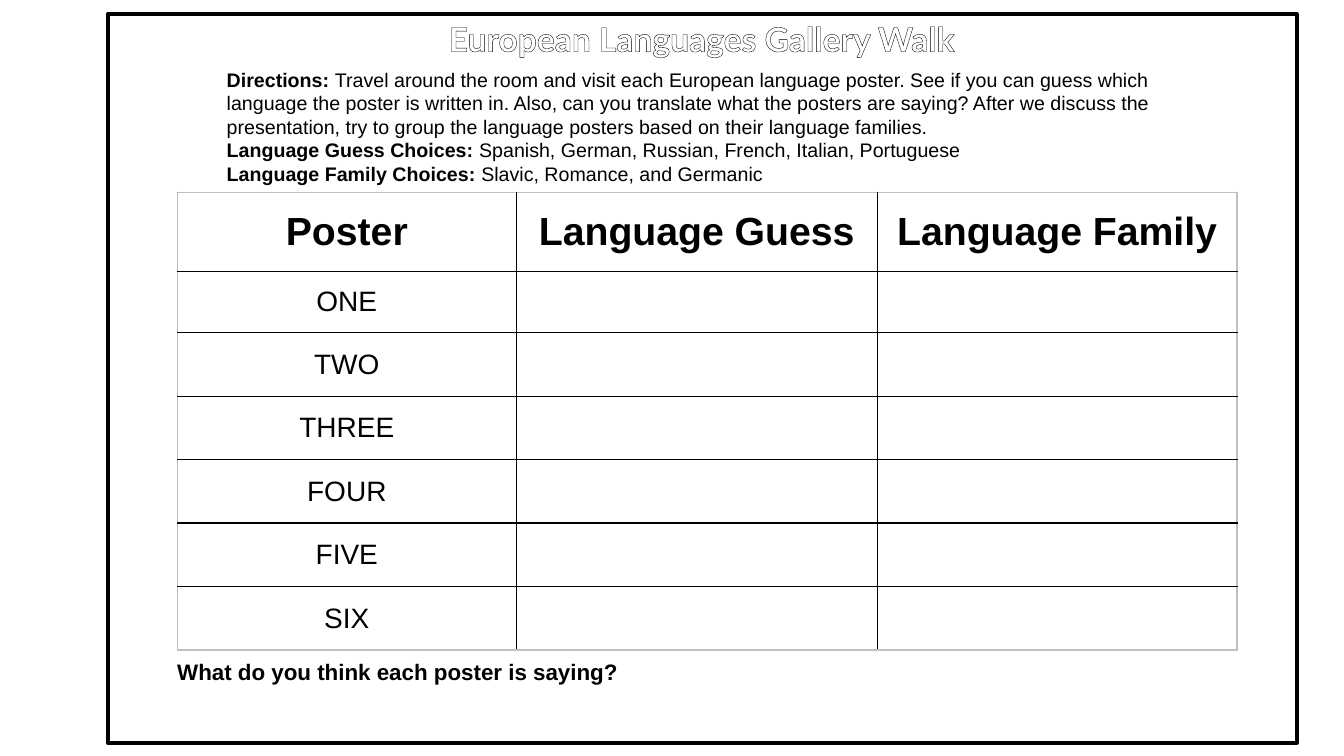
from lxml import etree
from pptx import Presentation, util as u
from pptx.dml.color import RGBColor
from pptx.enum import shapes, text
from pptx.oxml import parse_xml
from pptx.oxml.ns import nsdecls

COLORS = {"ink": "000000", "paper": "FFFFFF", "table edge": "BFBFBF"}
DIRECTIONS = [
    ("Directions: ", "Travel around the room and visit each European language poster. "
     "See if you can guess which language the poster is written in. Also, can you "
     "translate what the posters are saying? After we discuss the presentation, try to "
     "group the language posters based on their language families."),
    ("Language Guess Choices: ", "Spanish, German, Russian, French, Italian, Portuguese"),
    ("Language Family Choices: ", "Slavic, Romance, and Germanic"),
]
HEADINGS = ["Poster", "Language Guess", "Language Family"]
POSTERS = ["ONE", "TWO", "THREE", "FOUR", "FIVE", "SIX"]


def inches(box):
    return [u.Inches(length) for length in box]


def add_span(para, words, size, bold=False, font="Arial", color="ink"):
    span = para.add_run()
    span.text = words
    span.font.size = u.Pt(size)
    span.font.bold = bold
    span.font.name = font
    span.font.color.rgb = RGBColor.from_string(COLORS[color])
    return span


def line_xml(tag, color, points):
    return parse_xml(
        f'<a:{tag} {nsdecls("a")} w="{u.Pt(points)}"><a:solidFill>'
        f'<a:srgbClr val="{COLORS[color]}"/></a:solidFill></a:{tag}>')


def add_title(page, box):
    title = page.shapes.title
    title.left, title.top, title.width, title.height = inches(box)
    frame = title.text_frame
    frame.margin_left = frame.margin_right = u.Inches(0.07)
    frame.margin_top = frame.margin_bottom = u.Inches(0.04)
    frame.vertical_anchor = text.MSO_ANCHOR.TOP
    frame.auto_size = text.MSO_AUTO_SIZE.SHAPE_TO_FIT_TEXT
    para = frame.paragraphs[0]
    para.alignment = text.PP_ALIGN.CENTER
    span = add_span(para, "European Languages Gallery Walk", 24, True, "Lato", "paper")
    span.font._element.insert(0, line_xml("ln", "ink", 2.25))


def add_text(page, box, paragraphs, size):
    """Write paragraphs of a bold lead and a plain remainder."""
    frame = page.shapes.add_textbox(*inches(box)).text_frame
    frame.word_wrap = True
    frame.auto_size = text.MSO_AUTO_SIZE.SHAPE_TO_FIT_TEXT
    for index, (lead, rest) in enumerate(paragraphs):
        para = frame.add_paragraph() if index else frame.paragraphs[0]
        add_span(para, lead, size, True)
        if rest:
            add_span(para, rest, size)


def add_frame(page, box):
    frame = page.shapes.add_shape(shapes.MSO_SHAPE.RECTANGLE, *inches(box))
    frame.shadow.inherit = False
    frame.fill.background()
    frame.line.color.rgb = RGBColor.from_string(COLORS["ink"])
    frame.line.width = u.Pt(3)


def set_borders(cell, outer_sides):
    properties = cell._tc.get_or_add_tcPr()
    for index, side in enumerate(["lnL", "lnR", "lnT", "lnB"]):
        color = "table edge" if side in outer_sides else "ink"
        properties.insert(index, line_xml(side, color, 1))


def add_answer_table(page, box):
    rows = [HEADINGS] + [[poster, "", ""] for poster in POSTERS]
    table = page.shapes.add_table(len(rows), len(HEADINGS), *inches(box)).table
    for column, width in zip(table.columns, [3.36, 3.58, 3.57]):
        column.width = u.Inches(width)
    for row, height in zip(table.rows, [0.78, 0.61] + [0.63] * 5):
        row.height = u.Inches(height)
    for r, words in enumerate(rows):
        for c, word in enumerate(words):
            cell = table.cell(r, c)
            cell.fill.background()
            cell.vertical_anchor = text.MSO_ANCHOR.MIDDLE
            edges = {"lnL": c == 0, "lnR": c == len(words) - 1,
                     "lnT": r == 0, "lnB": r == len(rows) - 1}
            set_borders(cell, [side for side, outer in edges.items() if outer])
            if word:
                para = cell.text_frame.paragraphs[0]
                para.alignment = text.PP_ALIGN.CENTER
                add_span(para, word, 20 if r else 28, r == 0)


def main():
    deck = Presentation()
    deck.slide_width, deck.slide_height = u.Inches(13.33), u.Inches(7.5)
    page = deck.slides.add_slide(deck.slide_layouts[5])
    add_title(page, (3.61, 0.14, 6.7, 0.48))
    add_text(page, (2.15, 0.62, 9.81, 1.28), DIRECTIONS, 14)
    add_frame(page, (1.07, 0.14, 11.79, 7.23))
    add_answer_table(page, (1.76, 1.91, 10.51, 4.56))
    add_text(page, (1.66, 6.48, 7.26, 0.37),
             [("What do you think each poster is saying?", "")], 16)
    deck.save("out.pptx")


if __name__ == "__main__":
    main()
